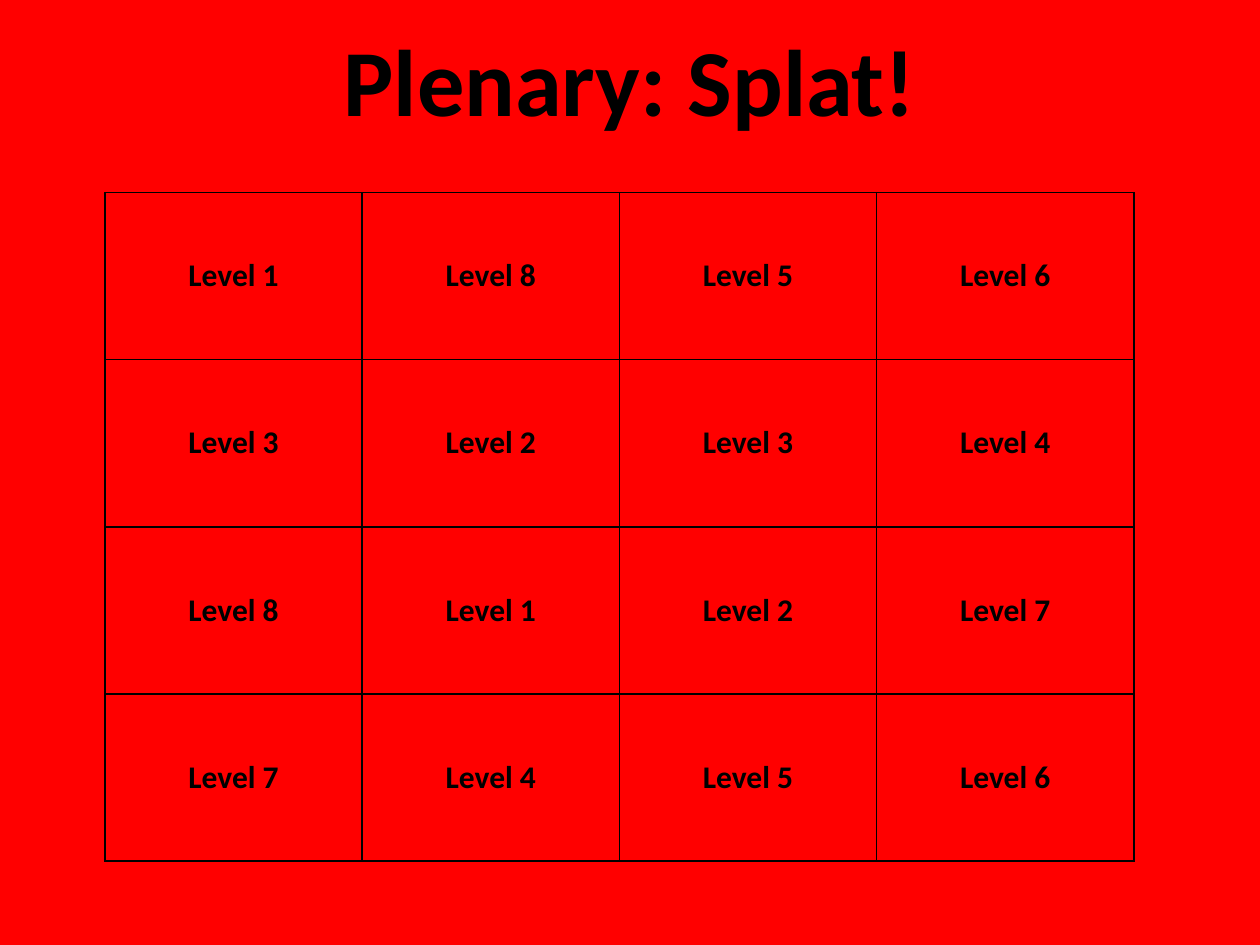
from lxml import etree
from pptx import Presentation
from pptx.dml.color import RGBColor
from pptx.enum import text
from pptx.oxml import ns
from pptx.util import Pt

COLORS = {"background": "FF0000", "ink": "000000"}
FONT = "Calibri"
BORDER_WIDTH = 1
LEVELS = [
    [1, 8, 5, 6],
    [3, 2, 3, 4],
    [8, 1, 2, 7],
    [7, 4, 5, 6],
]


def format_centred(paragraph, size):
    paragraph.alignment = text.PP_ALIGN.CENTER
    for run in paragraph.runs:
        run.font.name = FONT
        run.font.size = Pt(size)
        run.font.bold = True
        run.font.color.rgb = RGBColor.from_string(COLORS["ink"])


def add_cell_borders(cell):
    properties = cell._tc.get_or_add_tcPr()
    for side in ("a:lnL", "a:lnR", "a:lnT", "a:lnB"):
        line = etree.SubElement(properties, ns.qn(side), w=str(Pt(BORDER_WIDTH)))
        fill = etree.SubElement(line, ns.qn("a:solidFill"))
        etree.SubElement(fill, ns.qn("a:srgbClr"), val=COLORS["ink"])


def add_title(slide, left, top, width, height):
    title = slide.shapes.add_textbox(Pt(left), Pt(top), Pt(width), Pt(height))
    frame = title.text_frame
    frame.word_wrap = True
    frame.vertical_anchor = text.MSO_ANCHOR.MIDDLE
    frame.text = "Plenary: Splat!"
    format_centred(frame.paragraphs[0], 54)


def add_level_grid(slide, left, top, width, height):
    grid = slide.shapes.add_table(
        len(LEVELS), len(LEVELS[0]), Pt(left), Pt(top), Pt(width), Pt(height)
    ).table
    grid.first_row = False
    grid.horz_banding = False
    for row, levels in enumerate(LEVELS):
        for column, level in enumerate(levels):
            cell = grid.cell(row, column)
            cell.text = f"Level {level}"
            cell.vertical_anchor = text.MSO_ANCHOR.MIDDLE
            format_centred(cell.text_frame.paragraphs[0], 18)
            add_cell_borders(cell)
            cell.fill.background()


def main():
    deck = Presentation()
    deck.slide_width, deck.slide_height = Pt(720), Pt(540)
    slide = deck.slides.add_slide(deck.slide_layouts[6])
    backdrop = slide.background.fill
    backdrop.solid()
    backdrop.fore_color.rgb = RGBColor.from_string(COLORS["background"])
    add_title(slide, 36, 0, 648, 90)
    add_level_grid(slide, 60, 110, 588, 382)
    deck.save("out.pptx")


if __name__ == "__main__":
    main()
